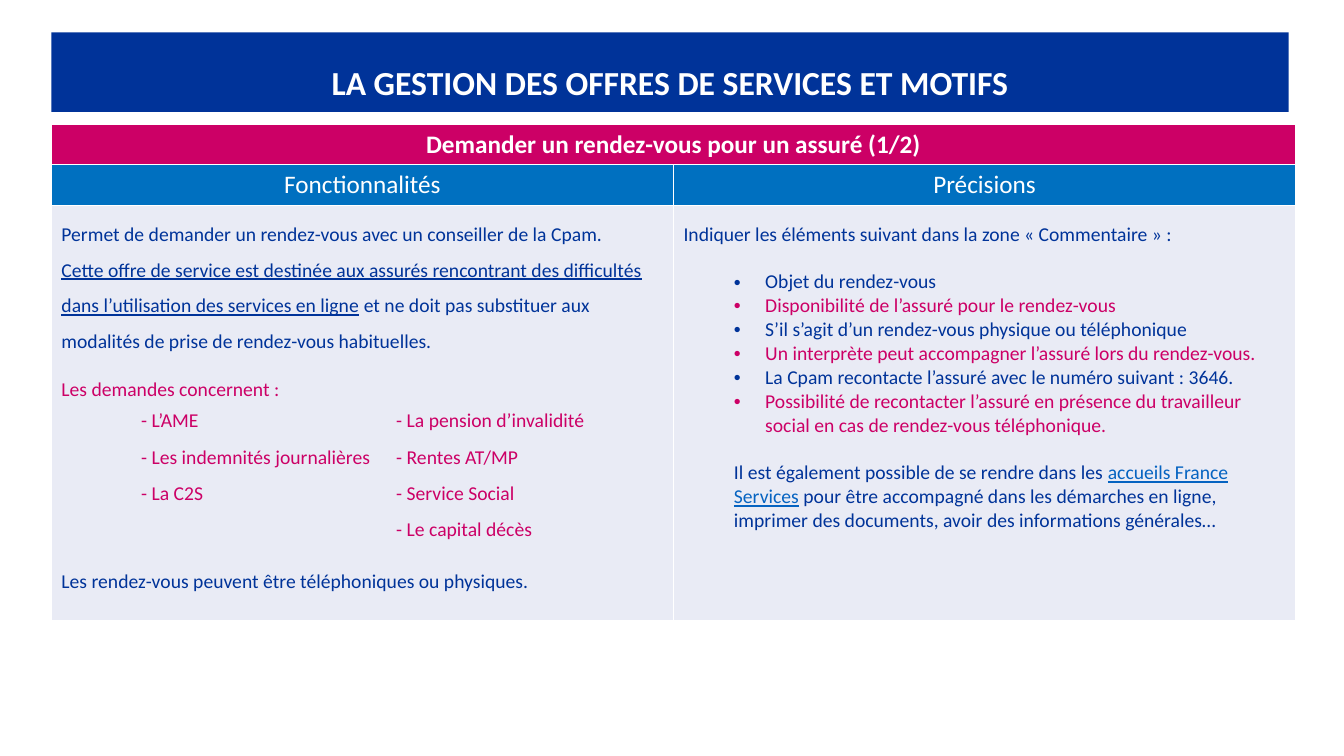
"""Build the slide on requesting an appointment for an insured person."""
from lxml.etree import SubElement
from pptx import Presentation
from pptx.dml.color import RGBColor
from pptx.enum.text import MSO_ANCHOR, MSO_AUTO_SIZE, PP_ALIGN
from pptx.oxml.ns import qn
from pptx.util import Inches, Pt

HUES = {"navy": "003399", "pink": "CC0066", "blue": "0070C0",
        "pale": "E9EBF5", "link": "0563C1", "white": "FFFFFF"}
PLAIN = "{2D5ABB26-0587-4C30-8999-92F81FD0307C}"


def hue(name):
    return RGBColor.from_string(HUES[name])


def write(frame, text, color="navy", size=14, bold=False, line=False, align=None,
          space=None, before=None, left=None, hang=0, dot=False, join=False):
    if join or not frame.paragraphs[-1].runs:
        para = frame.paragraphs[-1]
    else:
        para = frame.add_paragraph()
    if left is not None:
        para.level = 1
        props = para._p.get_or_add_pPr()
        props.set("marL", str(Inches(left)))
        props.set("indent", str(Inches(hang)))
        if dot:
            SubElement(props, qn("a:buFont"), typeface="Arial")
            SubElement(props, qn("a:buChar"), char="•")
    if align is not None:
        para.alignment = align
    if space is not None:
        para.line_spacing = space
    if before is not None:
        para.space_before = Pt(before)
    run = para.add_run()
    run.text = text
    font = run.font
    font.name, font.size, font.bold = "Calibri", Pt(size), bold
    font.underline = line
    font.color.rgb = hue(color)


deck = Presentation()
deck.slide_width, deck.slide_height = Inches(13.33), Inches(7.5)
slide = deck.slides.add_slide(deck.slide_layouts[5])
mid = PP_ALIGN.CENTER

title = slide.shapes.title
title.left, title.top = Inches(0.51), Inches(0.32)
title.width, title.height = Inches(12.27), Inches(0.79)
title.fill.solid()
title.fill.fore_color.rgb = hue("navy")
title.text_frame.auto_size = MSO_AUTO_SIZE.NONE
title.text_frame.vertical_anchor = MSO_ANCHOR.MIDDLE
write(title.text_frame, "LA GESTION DES OFFRES DE SERVICES ET MOTIFS",
      color="white", size=24, bold=True, align=mid, space=1.5)

main = slide.shapes.add_table(3, 2, Inches(0.51), Inches(1.23),
                              Inches(12.34), Inches(4.92)).table
for row, high in zip(main.rows, (0.4, 0.4, 4.12)):
    row.height = Inches(high)
for row, tint in zip(main.rows, ("pink", "blue", "pale")):
    for cell in row.cells:
        cell.fill.solid()
        cell.fill.fore_color.rgb = hue(tint)
main.cell(0, 0).merge(main.cell(0, 1))
write(main.cell(0, 0).text_frame, "Demander un rendez-vous pour un assuré (1/2)",
      color="white", size=18, bold=True, align=mid)
for col, head in enumerate(("Fonctionnalités", "Précisions")):
    write(main.cell(1, col).text_frame, head, color="white", size=18, align=mid)

uses = main.cell(2, 0).text_frame
write(uses, "Permet de demander un rendez-vous avec un conseiller de la Cpam.", space=1.5)
write(uses, "Cette offre de service est destinée aux assurés rencontrant des difficultés "
      "dans l’utilisation des services en ligne", line=True, space=1.5)
write(uses, " et ne doit pas substituer aux modalités de prise de rendez-vous habituelles.",
      join=True)
write(uses, "Les demandes concernent :", color="pink", before=17)
write(uses, "Les rendez-vous peuvent être téléphoniques ou physiques.", before=120)

notes = main.cell(2, 1).text_frame
write(notes, "Indiquer les éléments suivant dans la zone « Commentaire » :", space=1.5)
points = ("Objet du rendez-vous",
          "Disponibilité de l’assuré pour le rendez-vous",
          "S’il s’agit d’un rendez-vous physique ou téléphonique",
          "Un interprète peut accompagner l’assuré lors du rendez-vous.",
          "La Cpam recontacte l’assuré avec le numéro suivant : 3646.",
          "Possibilité de recontacter l’assuré en présence du travailleur social "
          "en cas de rendez-vous téléphonique.")
for rank, point in enumerate(points):
    write(notes, point, color=("navy", "pink")[rank % 2], left=0.81, hang=-0.31,
          dot=True, before=0 if rank else 17)
write(notes, "Il est également possible de se rendre dans les ", left=0.5, before=17)
write(notes, "accueils France Services", color="link", line=True, join=True)
write(notes, " pour être accompagné dans les démarches en ligne, imprimer des documents, "
      "avoir des informations générales…", join=True)

topics = (("- L’AME", "- La pension d’invalidité"),
          ("- Les indemnités journalières", "- Rentes AT/MP"),
          ("- La C2S", "- Service Social"),
          ("", "- Le capital décès"))
grid = slide.shapes.add_table(4, 2, Inches(1.3), Inches(4.01),
                              Inches(5.02), Inches(1.59)).table
grid.first_row = grid.horz_banding = False
grid._tbl.tblPr.find(qn("a:tableStyleId")).text = PLAIN
for col, wide in zip(grid.columns, (2.53, 2.49)):
    col.width = Inches(wide)
for row, high, pair in zip(grid.rows, (0.36, 0.36, 0.36, 0.51), topics):
    row.height = Inches(high)
    for cell, topic in zip(row.cells, pair):
        cell.fill.background()
        if topic:
            write(cell.text_frame, topic, color="pink")

deck.save("out.pptx")
